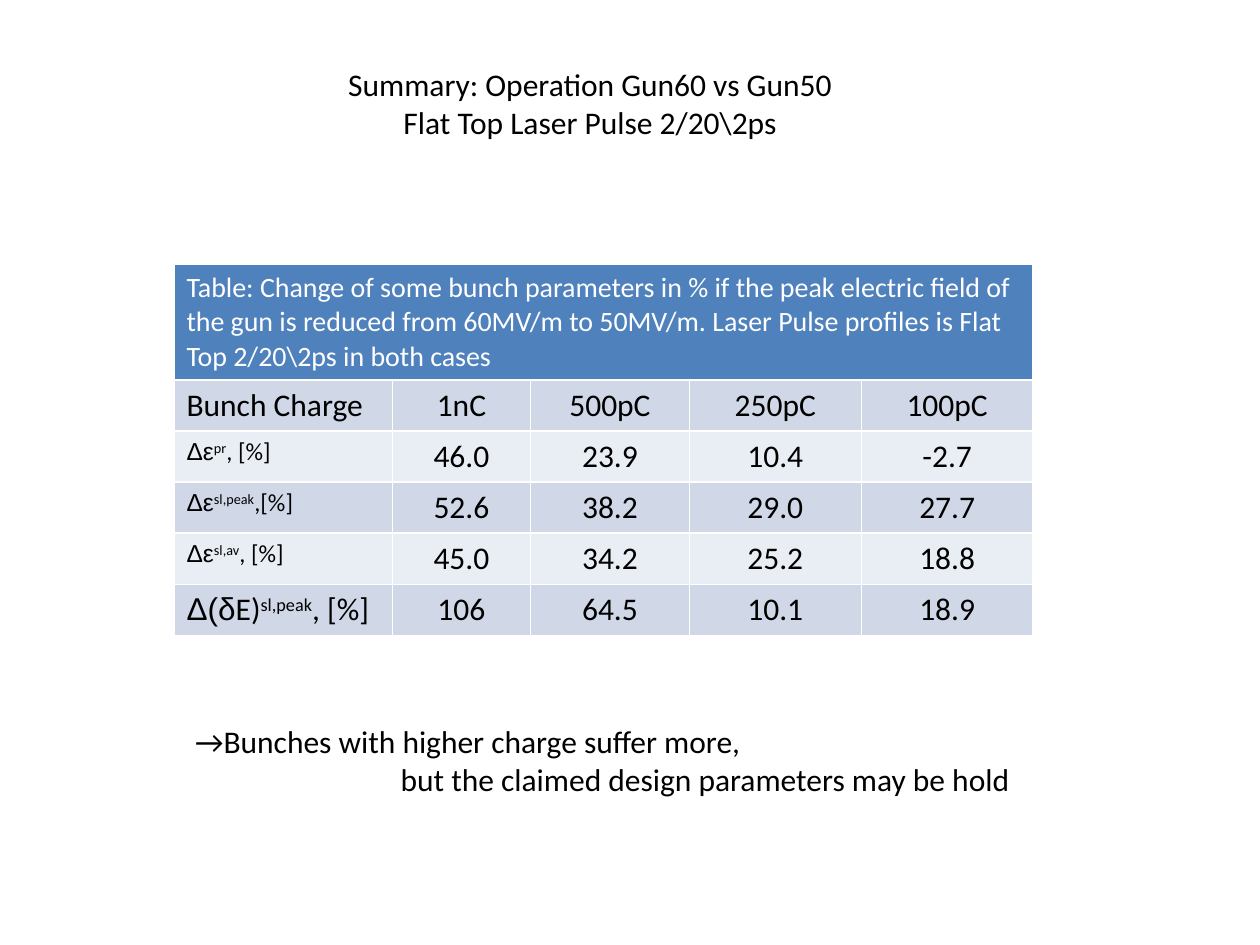
from pptx import Presentation
from pptx.dml.color import RGBColor
from pptx.enum.text import MSO_ANCHOR, PP_ALIGN
from pptx.util import Pt

CENTER = PP_ALIGN.CENTER
TOP = MSO_ANCHOR.TOP
BLACK, WHITE, BLUE = "000000", "FFFFFF", "4F81BD"
BANDS = ["D0D8E8", "E9EDF4"]
CAPTION = ("Table: Change of some bunch parameters in % if the peak electric field of "
           "the gun is reduced from 60MV/m to 50MV/m. Laser Pulse profiles is Flat "
           "Top 2/20\\2ps in both cases")
COLUMN_WIDTHS = [124.8, 79, 90.8, 98.2, 98.2]
CAPTION_HEIGHT, ROW_HEIGHT = 65, 29.2

# Each row label: size, Greek part, Latin part, superscript, ending
ROWS = [
    ((18, "", "Bunch Charge", "", ""), ["1nC", "500pC", "250pC", "100pC"]),
    ((14, "Δε", "", "pr", ", [%]"), ["46.0", "23.9", "10.4", "-2.7"]),
    ((14, "Δε", "", "sl,peak", ",[%]"), ["52.6", "38.2", "29.0", "27.7"]),
    ((14, "Δε", "", "sl,av", ", [%]"), ["45.0", "34.2", "25.2", "18.8"]),
    ((18, "Δ(δ", "E)", "sl,peak", ", [%]"), ["106", "64.5", "10.1", "18.9"]),
]


def color(hex_string):
    return RGBColor.from_string(hex_string)


def format_runs(para, size, hex_string=BLACK, font="Calibri"):
    for span in para.runs:
        span.font.size = Pt(size)
        span.font.name = font
        span.font.bold = False
        span.font.color.rgb = color(hex_string)


deck = Presentation()
deck.slide_width, deck.slide_height = Pt(720), Pt(540)
page = deck.slides.add_slide(deck.slide_layouts.get_by_name("Title Only"))

# Title
title = page.shapes.title
title.left, title.top, title.width, title.height = Pt(190), Pt(33.8), Pt(294.5), Pt(51)
title.text_frame.text = "Summary: Operation Gun60 vs Gun50\nFlat Top Laser Pulse 2/20\\2ps"
title.text_frame.vertical_anchor = TOP
for para in title.text_frame.paragraphs:
    para.alignment = CENTER
    format_runs(para, 18)

# Table of parameter changes
table = page.shapes.add_table(
    len(ROWS) + 1, len(COLUMN_WIDTHS), Pt(99.4), Pt(151.2),
    Pt(sum(COLUMN_WIDTHS)), Pt(CAPTION_HEIGHT + len(ROWS) * ROW_HEIGHT)).table
for column, width in zip(table.columns, COLUMN_WIDTHS):
    column.width = Pt(width)
for row in table.rows:
    row.height = Pt(ROW_HEIGHT)
table.rows[0].height = Pt(CAPTION_HEIGHT)

caption = table.cell(0, 0)
caption.merge(table.cell(0, len(COLUMN_WIDTHS) - 1))
caption.text_frame.text = CAPTION
caption.fill.solid()
caption.fill.fore_color.rgb = color(BLUE)
format_runs(caption.text_frame.paragraphs[0], 16, WHITE)

for row_index, (label, values) in enumerate(ROWS, start=1):
    for column_index in range(len(COLUMN_WIDTHS)):
        cell = table.cell(row_index, column_index)
        cell.fill.solid()
        cell.fill.fore_color.rgb = color(BANDS[(row_index - 1) % 2])
        para = cell.text_frame.paragraphs[0]
        if column_index:
            para.text = values[column_index - 1]
            para.alignment = CENTER
            format_runs(para, 18)
            continue
        size, greek, latin, superscript, ending = label
        for part in filter(None, (greek, latin, superscript, ending)):
            para.add_run().text = part
        format_runs(para, size)
        if greek:
            para.runs[0].font.name = "Arial"
            para.runs[-2].font._element.set("baseline", "30000")

# Conclusion
conclusion = page.shapes.add_textbox(Pt(104.4), Pt(409), Pt(487.5), Pt(51))
frame = conclusion.text_frame
frame.word_wrap = True
frame.text = ("→Bunches with higher charge suffer more,\n"
              "but the claimed design parameters may be hold")
for para in frame.paragraphs:
    format_runs(para, 18)
frame.paragraphs[1]._p.get_or_add_pPr().set("marL", str(Pt(117.5)))

deck.save("out.pptx")
